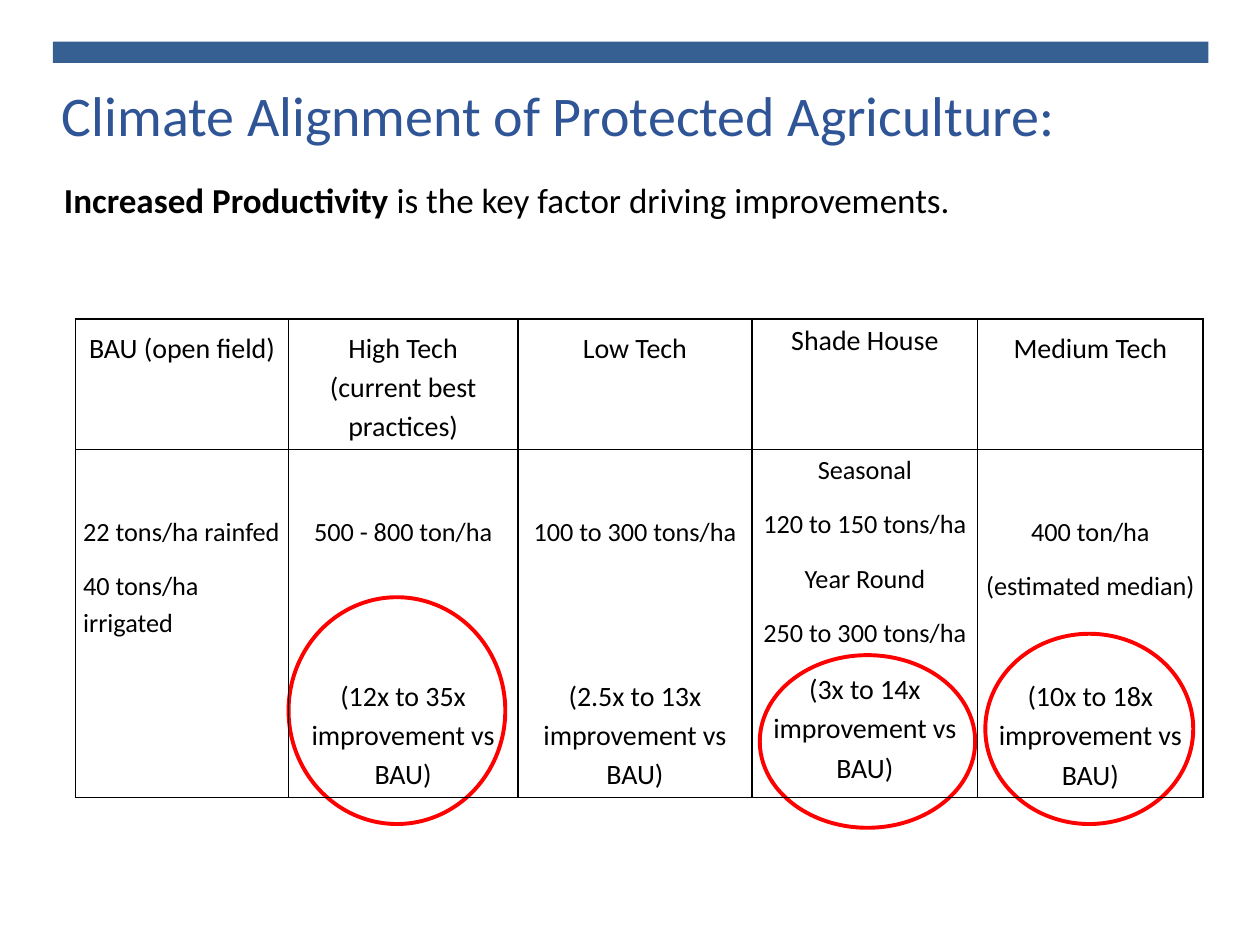
from dataclasses import dataclass
from lxml import etree
from pptx import Presentation
from pptx.dml.color import RGBColor
from pptx.enum.shapes import MSO_SHAPE as Shape
from pptx.enum.text import MSO_ANCHOR as Anchor, PP_ALIGN as Align
from pptx.oxml.ns import qn
from pptx.util import Inches, Pt


@dataclass(frozen=True)
class Theme:
    font: str = "Calibri"
    bar: str = "376092"
    title: str = "2F5597"
    text: str = "000000"
    ring: str = "FF0000"
    title_size: int = 32
    lead_size: int = 20
    strong_size: int = 16
    cell_size: int = 15


THEME = Theme()
TITLE = "Climate Alignment of Protected Agriculture:"
LEAD = [("Increased Productivity", True), (" is the key factor driving improvements.", False)]
COLUMNS = [
    dict(width=1.69, head=["BAU (open field)"],
         yields=["22 tons/ha rainfed", "40 tons/ha irrigated"], gain=[], skipped=0),
    dict(width=1.82, head=["High Tech", "(current best practices)"],
         yields=["500 - 800 ton/ha"], gain=["(12x to 35x improvement vs BAU)"], skipped=2),
    dict(width=1.86, head=["Low Tech"],
         yields=["100 to 300 tons/ha"], gain=["(2.5x to 13x", "improvement vs BAU)"], skipped=2),
    dict(width=1.79, head=["Shade House"],
         yields=["Seasonal", "120 to 150 tons/ha", "Year Round", "250 to 300 tons/ha"],
         gain=["(3x to 14x", "improvement vs BAU)"], skipped=0),
    dict(width=1.79, head=["Medium Tech"],
         yields=["400 ton/ha", "(estimated median)"],
         gain=["(10x to 18x", "improvement vs BAU)"], skipped=1),
]
ROW_HEIGHTS = [1.03, 2.76]
RINGS = [(2.29, 4.74, 1.72, 1.8), (6.03, 5.2, 1.71, 1.37), (7.82, 5.03, 1.65, 1.51)]
LINE_SPACING = 1.15
SPACE_AFTER = 10
SKIPPED_LINE = 31


def inches(*lengths):
    return [Inches(length) for length in lengths]


def set_font(font, size, color=THEME.text):
    font.name, font.size = THEME.font, Pt(size)
    font.color.rgb = RGBColor.from_string(color)


def add_plain_shape(slide, kind, place):
    shape = slide.shapes.add_shape(kind, *inches(*place))
    shape.shadow.inherit = False
    return shape


def add_bar(slide):
    bar = add_plain_shape(slide, Shape.RECTANGLE, (0.42, 0.33, 9.17, 0.17))
    bar.fill.solid()
    bar.fill.fore_color.rgb = RGBColor.from_string(THEME.bar)
    bar.line.fill.background()


def add_title(slide):
    title = slide.shapes.title
    title.left, title.top, title.width, title.height = inches(0.39, 0.65, 9.17, 0.58)
    title.text_frame.text = TITLE
    title.text_frame.vertical_anchor = Anchor.MIDDLE
    para = title.text_frame.paragraphs[0]
    para.alignment, para.line_spacing = Align.LEFT, 0.9
    set_font(para.font, THEME.title_size, THEME.title)


def add_lead(slide):
    box = slide.shapes.add_textbox(*inches(0.41, 1.37, 8.96, 1.65))
    box.text_frame.word_wrap = True
    para = box.text_frame.paragraphs[0]
    set_font(para.font, THEME.lead_size)
    for text, bold in LEAD:
        span = para.add_run()
        span.text, span.font.bold = text, bold


def add_ring(slide, place):
    ring = add_plain_shape(slide, Shape.OVAL, place)
    ring.fill.background()
    ring.line.color.rgb = RGBColor.from_string(THEME.ring)
    ring.line.width = Pt(2.25)


def add_borders(cell):
    properties = cell._tc.get_or_add_tcPr()
    for side in ("lnL", "lnR", "lnT", "lnB"):
        line = etree.SubElement(properties, qn(f"a:{side}"), w=str(Pt(1)))
        fill = etree.SubElement(line, qn("a:solidFill"))
        etree.SubElement(fill, qn("a:srgbClr"), val=THEME.text)


def format_cell(cell, lines, align, margins):
    add_borders(cell)
    cell.fill.background()
    cell.margin_left = cell.margin_right = Inches(margins[0])
    cell.margin_top, cell.margin_bottom = inches(*margins[1:])
    frame = cell.text_frame
    frame.text = "\n".join(line[0] for line in lines)
    for para, (_, size, before, after) in zip(frame.paragraphs, lines):
        para.alignment, para.line_spacing = align, LINE_SPACING
        para.space_before, para.space_after = Pt(before), Pt(after)
        set_font(para.font, size)
        para.font.bold = False


def add_yield_table(slide):
    width = sum(column["width"] for column in COLUMNS)
    place = inches(0.6, 2.53, width, sum(ROW_HEIGHTS))
    table = slide.shapes.add_table(len(ROW_HEIGHTS), len(COLUMNS), *place).table
    table.first_row = table.horz_banding = False
    for row, height in zip(table.rows, ROW_HEIGHTS):
        row.height = Inches(height)
    for index, column in enumerate(COLUMNS):
        table.columns[index].width = Inches(column["width"])
        full = len(column["yields"]) == 4
        side, edge = (0.07, 0) if full else (0.06, 0.06)
        body_top = edge if full else 0.49
        head = [(text, THEME.strong_size, 0, 0) for text in column["head"]]
        body = [(text, THEME.cell_size, 0, SPACE_AFTER) for text in column["yields"]]
        for place_in_gain, text in enumerate(column["gain"]):
            before = 0 if place_in_gain else column["skipped"] * SKIPPED_LINE
            last = place_in_gain == len(column["gain"]) - 1
            body.append((text, THEME.strong_size, before, SPACE_AFTER if last else 0))
        align = Align.CENTER if column["gain"] else Align.LEFT
        format_cell(table.cell(0, index), head, Align.CENTER, (side, edge, edge))
        format_cell(table.cell(1, index), body, align, (side, body_top, edge))


def main():
    deck = Presentation()
    deck.slide_width, deck.slide_height = inches(10, 7.5)
    slide = deck.slides.add_slide(deck.slide_layouts[5])
    add_bar(slide)
    add_title(slide)
    add_lead(slide)
    for place in RINGS:
        add_ring(slide, place)
    add_yield_table(slide)
    deck.save("out.pptx")


if __name__ == "__main__":
    main()
